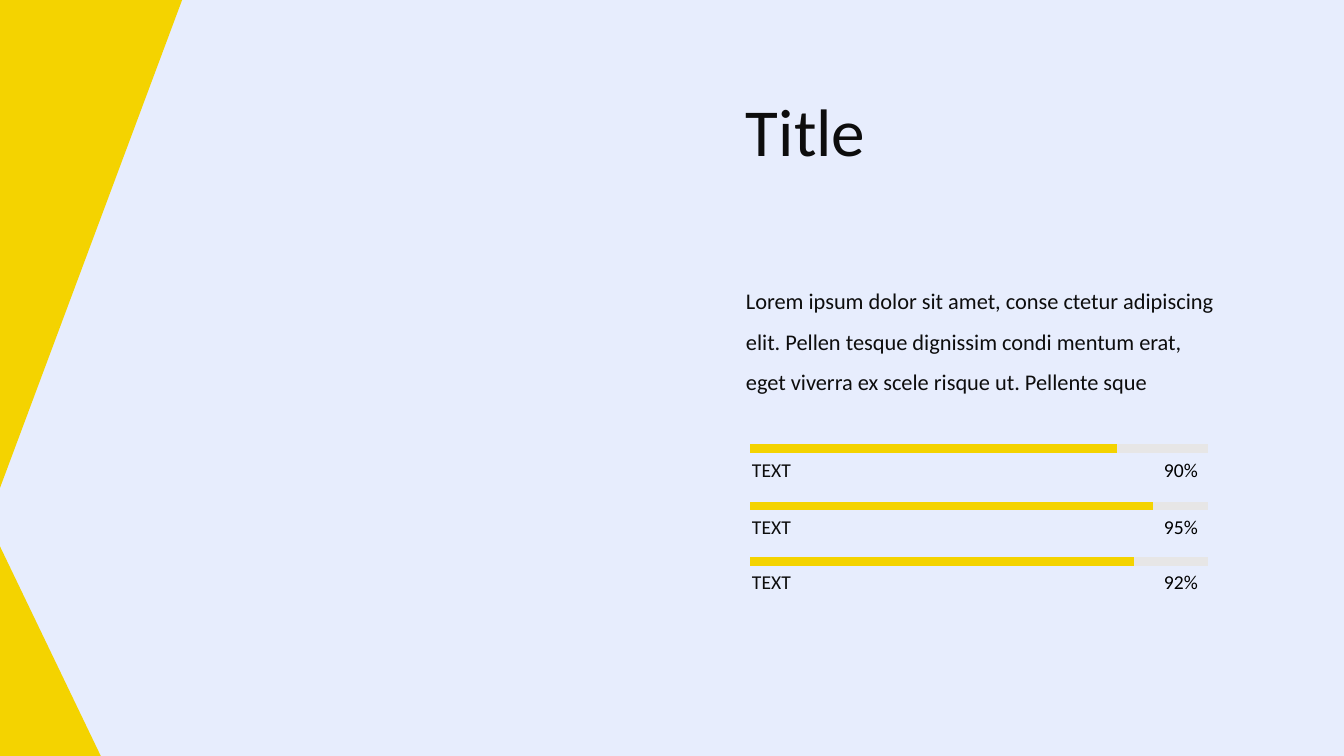
from lxml import etree
from pptx import Presentation
from pptx.dml.color import RGBColor
from pptx.enum.shapes import MSO_CONNECTOR, MSO_SHAPE
from pptx.enum.text import MSO_AUTO_SIZE, PP_ALIGN
from pptx.oxml.ns import qn
from pptx.util import Inches, Pt

BACKGROUND = RGBColor(0xE7, 0xED, 0xFD)
YELLOW = RGBColor(0xF4, 0xD3, 0x00)
TRACK_GRAY = RGBColor(0xE7, 0xE6, 0xE6)
INK = RGBColor(0x0D, 0x0D, 0x0D)
BLACK = RGBColor(0x00, 0x00, 0x00)

presentation = Presentation()
presentation.slide_width = Inches(13.33)
presentation.slide_height = Inches(7.5)
slide = presentation.slides.add_slide(presentation.slide_layouts[6])
slide.background.fill.solid()
slide.background.fill.fore_color.rgb = BACKGROUND


def add_text(text, left, top, width, height, size, color=INK,
             align=PP_ALIGN.LEFT, line_spacing=1.0):
    box = slide.shapes.add_textbox(Inches(left), Inches(top), Inches(width), Inches(height))
    frame = box.text_frame
    frame.word_wrap = True
    frame.auto_size = MSO_AUTO_SIZE.SHAPE_TO_FIT_TEXT
    paragraph = frame.paragraphs[0]
    paragraph.alignment = align
    paragraph.line_spacing = line_spacing
    run = paragraph.add_run()
    run.text = text
    run.font.name = "Calibri"
    run.font.size = Pt(size)
    run.font.color.rgb = color


def add_bar(left, right, y, color):
    bar = slide.shapes.add_connector(
        MSO_CONNECTOR.STRAIGHT, Inches(left), Inches(y), Inches(right), Inches(y))
    bar.line.color.rgb = color
    bar.line.width = Pt(6)
    etree.SubElement(bar._element.spPr, qn("a:effectLst"))


# Yellow corners on the left edge
for top, width, height, upside_down in [(5.42, 1, 2.08, False), (-0.01, 1.81, 4.85, True)]:
    corner = slide.shapes.add_shape(
        MSO_SHAPE.RIGHT_TRIANGLE, Inches(0), Inches(top), Inches(width), Inches(height))
    corner.shadow.inherit = False
    corner.fill.solid()
    corner.fill.fore_color.rgb = YELLOW
    corner.line.fill.background()
    if upside_down:
        corner._element.spPr.find(qn("a:xfrm")).set("flipV", "1")

add_text("Title", 7.3, 0.84, 3.81, 0.91, size=48)
add_text(
    "Lorem ipsum dolor sit amet, conse ctetur adipiscing elit. Pellen tesque dignissim "
    "condi mentum erat, eget viverra ex scele risque ut. Pellente sque",
    7.3, 2.67, 4.86, 1.27, size=16, line_spacing=1.5)

# Progress bars: value, bar height on the slide, right end of the yellow part
BAR_LEFT, BAR_RIGHT = 7.44, 11.98
for value, y, filled_right in [("90%", 4.45, 11.08), ("95%", 5.02, 11.44), ("92%", 5.57, 11.25)]:
    add_bar(BAR_LEFT, BAR_RIGHT, y, TRACK_GRAY)
    add_bar(BAR_LEFT, filled_right, y, YELLOW)
    label_top = y + 0.04
    add_text("TEXT", 7.36, label_top, 1.19, 0.37, size=14)
    add_text(value, 11.25, label_top, 0.73, 0.37, size=14, color=BLACK, align=PP_ALIGN.RIGHT)

presentation.save("out.pptx")
